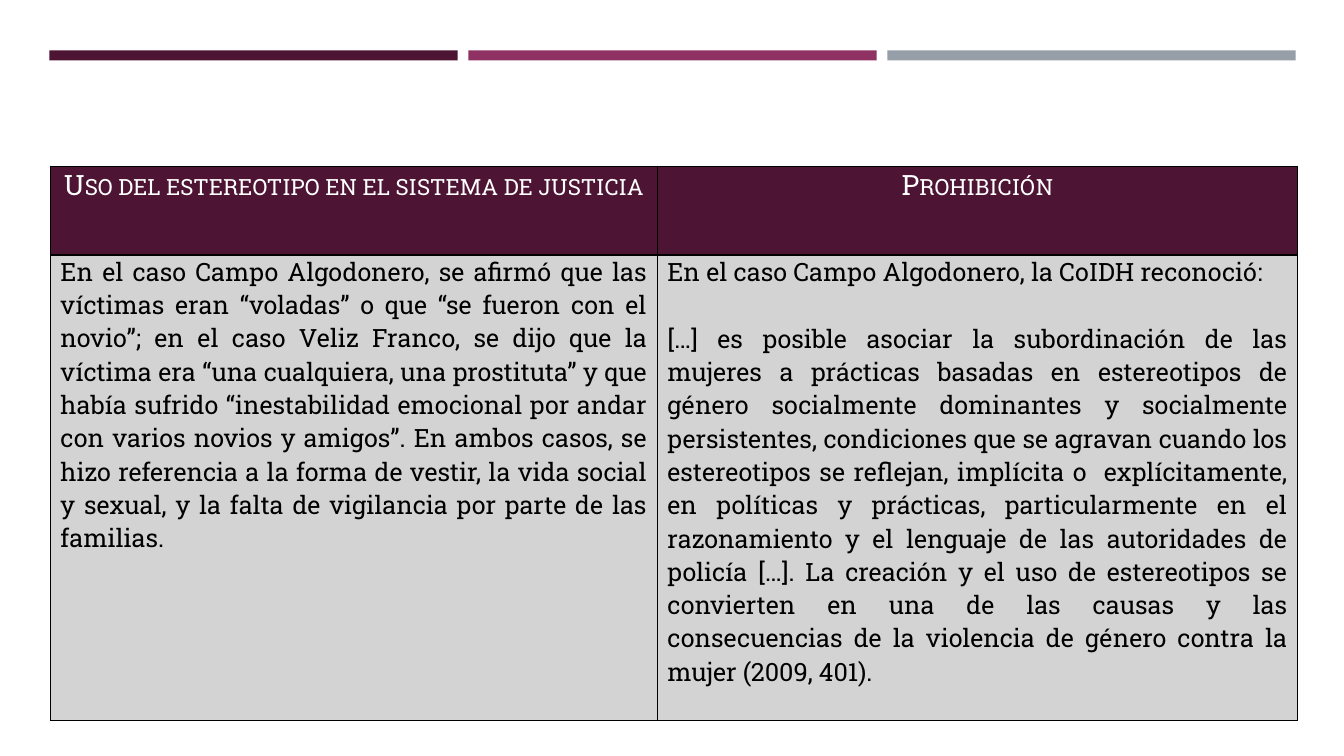
from lxml import etree
from pptx import Presentation
from pptx.dml.color import RGBColor
from pptx.enum.shapes import MSO_SHAPE
from pptx.enum.text import PP_ALIGN
from pptx.oxml.ns import qn
from pptx.util import Inches, Pt

RECTANGLE = MSO_SHAPE.RECTANGLE
CENTER, JUSTIFY = PP_ALIGN.CENTER, PP_ALIGN.JUSTIFY
PLUM = RGBColor(0x4D, 0x14, 0x34)
MAGENTA = RGBColor(0x90, 0x31, 0x63)
SLATE = RGBColor(0x96, 0x9F, 0xA7)
LIGHT_GRAY = RGBColor(0xD3, 0xD3, 0xD3)
WHITE = RGBColor(0xFF, 0xFF, 0xFF)
BLACK = RGBColor(0, 0, 0)
FONT = "Roboto Slab"

HEADINGS = ["Uso del estereotipo en el sistema de justicia", "Prohibición"]
CASES = [
    "En el caso Campo Algodonero, se afirmó que las víctimas eran “voladas” o que "
    "“se fueron con el novio”; en el caso Veliz Franco, se dijo que la víctima era "
    "“una cualquiera, una prostituta” y que había sufrido “inestabilidad emocional "
    "por andar con varios novios y amigos”. En ambos casos, se hizo referencia a la "
    "forma de vestir, la vida social y sexual, y la falta de vigilancia por parte de "
    "las familias.",
]
RULING = [
    "En el caso Campo Algodonero, la CoIDH reconoció:",
    "[…] es posible asociar la subordinación de las mujeres a prácticas basadas en "
    "estereotipos de género socialmente dominantes y socialmente persistentes, "
    "condiciones que se agravan cuando los estereotipos se reflejan, implícita o  "
    "explícitamente, en políticas y prácticas, particularmente en el razonamiento y "
    "el lenguaje de las autoridades de policía […]. La creación y el uso de "
    "estereotipos se convierten en una de las causas y las consecuencias de la "
    "violencia de género contra la mujer (2009, 401).",
]
COLUMN_WIDTHS = [6.02, 6.35]
ROW_HEIGHTS = [0.88, 4.62]
BAR_COLORS = [PLUM, MAGENTA, SLATE]
BAR_LEFT, BAR_TOP, BAR_WIDTH, BAR_HEIGHT, BAR_STEP = 0.49, 0.5, 4.05, 0.1, 4.155


def add_borders(cell):
    properties = cell._tc.get_or_add_tcPr()
    for side in ("lnL", "lnR", "lnT", "lnB"):
        line = etree.SubElement(properties, qn(f"a:{side}"), w=str(Pt(1)))
        solid = etree.SubElement(line, qn("a:solidFill"))
        etree.SubElement(solid, qn("a:srgbClr"), val=str(BLACK))


def fill_cell(cell, texts, fill, color, size, alignment, inset):
    add_borders(cell)
    cell.fill.solid()
    cell.fill.fore_color.rgb = fill
    cell.margin_left = cell.margin_right = Inches(inset)
    cell.margin_top = cell.margin_bottom = 0
    frame = cell.text_frame
    frame.text = "\n".join(texts)
    for index, paragraph in enumerate(frame.paragraphs):
        paragraph.alignment = alignment
        paragraph.space_before = Pt(24 if index else 0)
        font = paragraph.font
        font.name, font.size, font.bold = FONT, Pt(size), False
        font.color.rgb = color


def set_small_caps(cell):
    for run in cell.text_frame.paragraphs[0].runs:
        run._r.get_or_add_rPr().set("cap", "small")


def main():
    deck = Presentation()
    deck.slide_width, deck.slide_height = Inches(13.33), Inches(7.5)
    slide = deck.slides.add_slide(deck.slide_layouts[6])

    for index, color in enumerate(BAR_COLORS):
        bar = slide.shapes.add_shape(
            RECTANGLE, Inches(BAR_LEFT + index * BAR_STEP), Inches(BAR_TOP),
            Inches(BAR_WIDTH), Inches(BAR_HEIGHT))
        bar.shadow.inherit = False
        bar.fill.solid()
        bar.fill.fore_color.rgb = color
        bar.line.fill.background()

    table = slide.shapes.add_table(
        2, 2, Inches(0.5), Inches(1.65),
        Inches(sum(COLUMN_WIDTHS)), Inches(sum(ROW_HEIGHTS))).table
    for column, width in zip(table.columns, COLUMN_WIDTHS):
        column.width = Inches(width)
    for row, height in zip(table.rows, ROW_HEIGHTS):
        row.height = Inches(height)

    for column, (heading, body) in enumerate(zip(HEADINGS, [CASES, RULING])):
        fill_cell(table.cell(0, column), [heading], PLUM, WHITE, 20, CENTER, 0.07)
        set_small_caps(table.cell(0, column))
        fill_cell(table.cell(1, column), body, LIGHT_GRAY, BLACK, 18, JUSTIFY, 0.1)

    deck.save("out.pptx")


if __name__ == "__main__":
    main()
